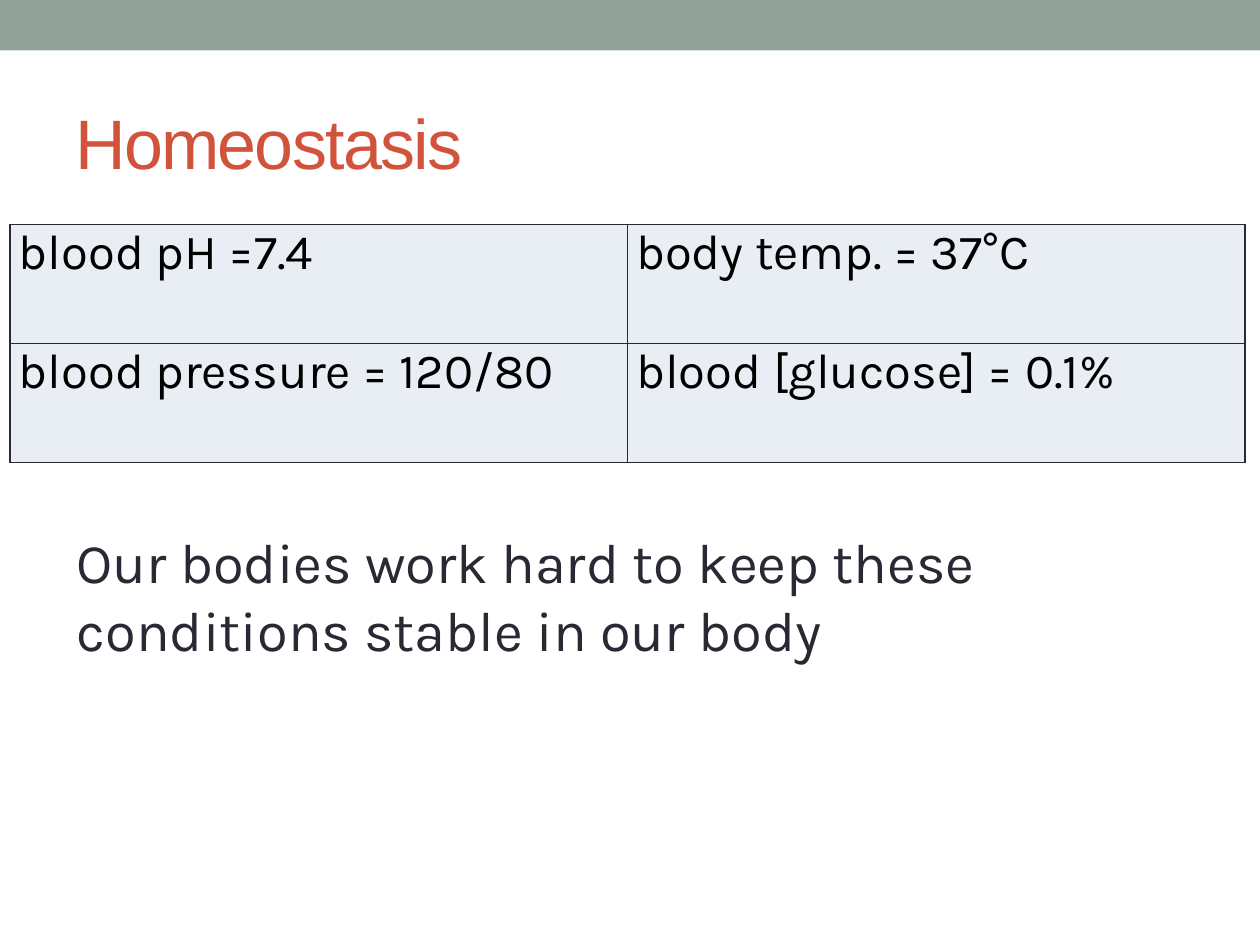
from dataclasses import dataclass

from lxml.etree import SubElement
from pptx import Presentation
from pptx.dml.color import RGBColor
from pptx.enum.shapes import MSO_SHAPE
from pptx.enum.text import MSO_ANCHOR, MSO_AUTO_SIZE
from pptx.oxml.ns import qn
from pptx.util import Inches, Pt

COLORS = {
    "bar": "93A299",
    "title": "D2533C",
    "cell": "E9EDF4",
    "ink": "292934",
    "black": "000000",
}
FACTS = [
    ["blood pH =7.4", "body temp. = 37°C"],
    ["blood pressure = 120/80", "blood [glucose] = 0.1%"],
]


@dataclass
class Style:
    font: str
    size: int
    color: str
    spacing: int = 0  # hundredths of a point


@dataclass
class Label:
    text: str
    left: float
    top: float
    width: float
    height: float
    style: Style
    anchor: MSO_ANCHOR = MSO_ANCHOR.TOP
    grow: bool = False


FACT = Style("Karla", 28, "black")
LABELS = [
    Label("Homeostasis", 0.5, 0.58, 9, 1.08,
          Style("Arial", 40, "title", -100), MSO_ANCHOR.MIDDLE),
    Label("Our bodies work hard to keep these conditions stable in our body",
          0.51, 4.14, 9.14, 1.18, Style("Karla", 32, "ink"), grow=True),
]


def rgb(name: str) -> RGBColor:
    return RGBColor.from_string(COLORS[name])


def add_run(frame, text: str, style: Style) -> None:
    run = frame.paragraphs[0].add_run()
    run.text = text
    run.font.name = style.font
    run.font.size = Pt(style.size)
    run.font.color.rgb = rgb(style.color)
    if style.spacing:
        run.font._element.set("spc", str(style.spacing))


def add_label(slide, label: Label) -> None:
    box = slide.shapes.add_textbox(Inches(label.left), Inches(label.top),
                                   Inches(label.width), Inches(label.height))
    frame = box.text_frame
    frame.word_wrap = True
    frame.vertical_anchor = label.anchor
    if label.grow:
        frame.auto_size = MSO_AUTO_SIZE.SHAPE_TO_FIT_TEXT
    add_run(frame, label.text, label.style)


def add_borders(cell) -> None:
    """Outline all four sides; borders must come before the fill in tcPr."""
    props = cell._tc.get_or_add_tcPr()
    for side in ("lnL", "lnR", "lnT", "lnB"):
        line = SubElement(props, qn(f"a:{side}"), w=str(Pt(1)))
        fill = SubElement(line, qn("a:solidFill"))
        SubElement(fill, qn("a:srgbClr"), val=COLORS["ink"])


def add_facts(slide) -> None:
    table = slide.shapes.add_table(len(FACTS), len(FACTS[0]), Inches(0.08),
                                   Inches(1.78), Inches(9.8), Inches(1.89)).table
    table.first_row = False
    table.horz_banding = False
    for r, row in enumerate(FACTS):
        for c, text in enumerate(row):
            cell = table.cell(r, c)
            cell.margin_left = cell.margin_right = Inches(0.07)
            cell.margin_top = cell.margin_bottom = 0
            add_borders(cell)
            cell.fill.solid()
            cell.fill.fore_color.rgb = rgb("cell")
            add_run(cell.text_frame, text, FACT)


def add_bar(slide, width: int) -> None:
    bar = slide.shapes.add_shape(MSO_SHAPE.RECTANGLE, 0, 0, width, Inches(0.4))
    bar.shadow.inherit = False
    bar.fill.solid()
    bar.fill.fore_color.rgb = rgb("bar")
    bar.line.fill.background()


def main() -> None:
    deck = Presentation()
    deck.slide_width = Inches(10)
    deck.slide_height = Inches(7.5)
    slide = deck.slides.add_slide(deck.slide_layouts[6])
    title, note = LABELS
    add_bar(slide, deck.slide_width)
    add_label(slide, title)
    add_facts(slide)
    add_label(slide, note)
    deck.save("out.pptx")


if __name__ == "__main__":
    main()
